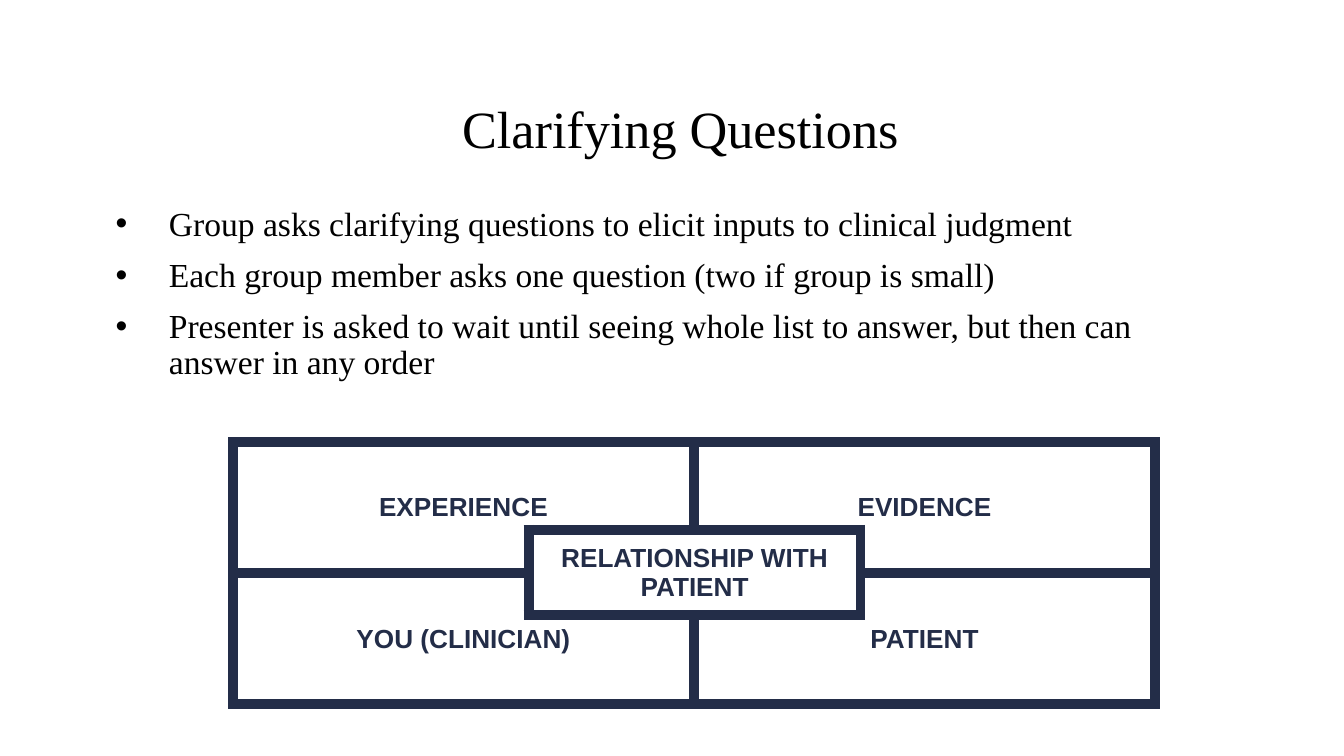
from lxml import etree
from pptx import Presentation
from pptx.dml.color import RGBColor
from pptx.enum.text import MSO_ANCHOR, MSO_AUTO_SIZE, PP_ALIGN
from pptx.oxml.ns import qn
from pptx.util import Pt

NAVY = RGBColor(0x23, 0x2D, 0x48)
BLACK = RGBColor(0, 0, 0)
WHITE = RGBColor(255, 255, 255)
MIDDLE, TOP = MSO_ANCHOR.MIDDLE, MSO_ANCHOR.TOP
CENTER, LEFT = PP_ALIGN.CENTER, PP_ALIGN.LEFT
FIXED = MSO_AUTO_SIZE.NONE

TITLE = {"name": "Times New Roman", "size": Pt(28), "bold": False}
BODY = {"name": "Times New Roman", "size": Pt(18), "bold": False}
LABEL = {"name": "Arial", "size": Pt(14), "bold": True}
FRAME = {"margin_left": Pt(5), "margin_right": Pt(5), "margin_top": Pt(3),
         "margin_bottom": Pt(3), "word_wrap": True, "auto_size": FIXED}
CELL = {"margin_left": Pt(7.2), "margin_right": Pt(7.2), "margin_top": Pt(7.2),
        "margin_bottom": Pt(7.2), "vertical_anchor": MIDDLE}


def apply(item, values):
    """Set each named value on the item."""
    for name, value in values.items():
        setattr(item, name, value)


class Deck:
    """Holds the style and the current slide."""

    def __init__(self, width, height):
        self.show = Presentation()
        self.show.slide_width, self.show.slide_height = Pt(width), Pt(height)
        self.slide = self.show.slides.add_slide(self.show.slide_layouts[5])

    def label(self, para, text, style, color, align):
        para.text = text
        para.alignment = align
        font = para.runs[0].font
        apply(font, style)
        font.color.rgb = color

    def title(self, text, left, top, width, height):
        shape = self.slide.shapes.title
        apply(shape, {"left": Pt(left), "top": Pt(top),
                      "width": Pt(width), "height": Pt(height)})
        frame = shape.text_frame
        apply(frame, FRAME | {"vertical_anchor": MIDDLE})
        self.label(frame.paragraphs[0], text, TITLE, BLACK, CENTER)
        frame.paragraphs[0].line_spacing = 0.9

    def bullets(self, lines, left, top, width, height):
        box = self.slide.shapes.add_textbox(Pt(left), Pt(top), Pt(width), Pt(height))
        frame = box.text_frame
        apply(frame, FRAME | {"vertical_anchor": TOP})
        for i, line in enumerate(lines):
            para = frame.add_paragraph() if i else frame.paragraphs[0]
            props = para._p.get_or_add_pPr()
            props.set("marL", str(Pt(36)))
            props.set("indent", str(Pt(-28.5)))
            etree.SubElement(props, qn("a:buFont"), typeface="Arial")
            etree.SubElement(props, qn("a:buChar"), char="•")
            self.label(para, line, BODY, BLACK, LEFT)
            apply(para, {"line_spacing": 0.9, "space_before": Pt(8 if i else 0)})

    def border(self, cell):
        props = cell._tc.get_or_add_tcPr()
        for i, side in enumerate(("lnL", "lnR", "lnT", "lnB")):
            line = etree.Element(qn(f"a:{side}"), w=str(Pt(6)))
            fill = etree.SubElement(line, qn("a:solidFill"))
            etree.SubElement(fill, qn("a:srgbClr"), val=str(NAVY))
            props.insert(i, line)

    def table(self, rows, left, top, width, height):
        grid = self.slide.shapes.add_table(
            len(rows), len(rows[0]), Pt(left), Pt(top), Pt(width), Pt(height)).table
        apply(grid, {"first_row": False, "horz_banding": False})
        for r, row in enumerate(rows):
            for c, text in enumerate(row):
                cell = grid.cell(r, c)
                apply(cell, CELL)
                cell.fill.solid()
                cell.fill.fore_color.rgb = WHITE
                self.border(cell)
                self.label(cell.text_frame.paragraphs[0], text, LABEL, NAVY, CENTER)


def main():
    deck = Deck(720, 405)
    deck.table([["EXPERIENCE", "EVIDENCE"], ["YOU (CLINICIAN)", "PATIENT"]],
               124.8, 237, 494, 140.4)
    deck.table([["RELATIONSHIP WITH PATIENT"]], 283.2, 283.8, 177.8, 45.5)
    deck.title("Clarifying Questions", 49.5, 41, 630, 58.5)
    deck.bullets([
        "Group asks clarifying questions to elicit inputs to clinical judgment",
        "Each group member asks one question (two if group is small)",
        "Presenter is asked to wait until seeing whole list to answer, "
        "but then can answer in any order",
    ], 49.5, 108, 591, 120)
    deck.show.save("out.pptx")


if __name__ == "__main__":
    main()
